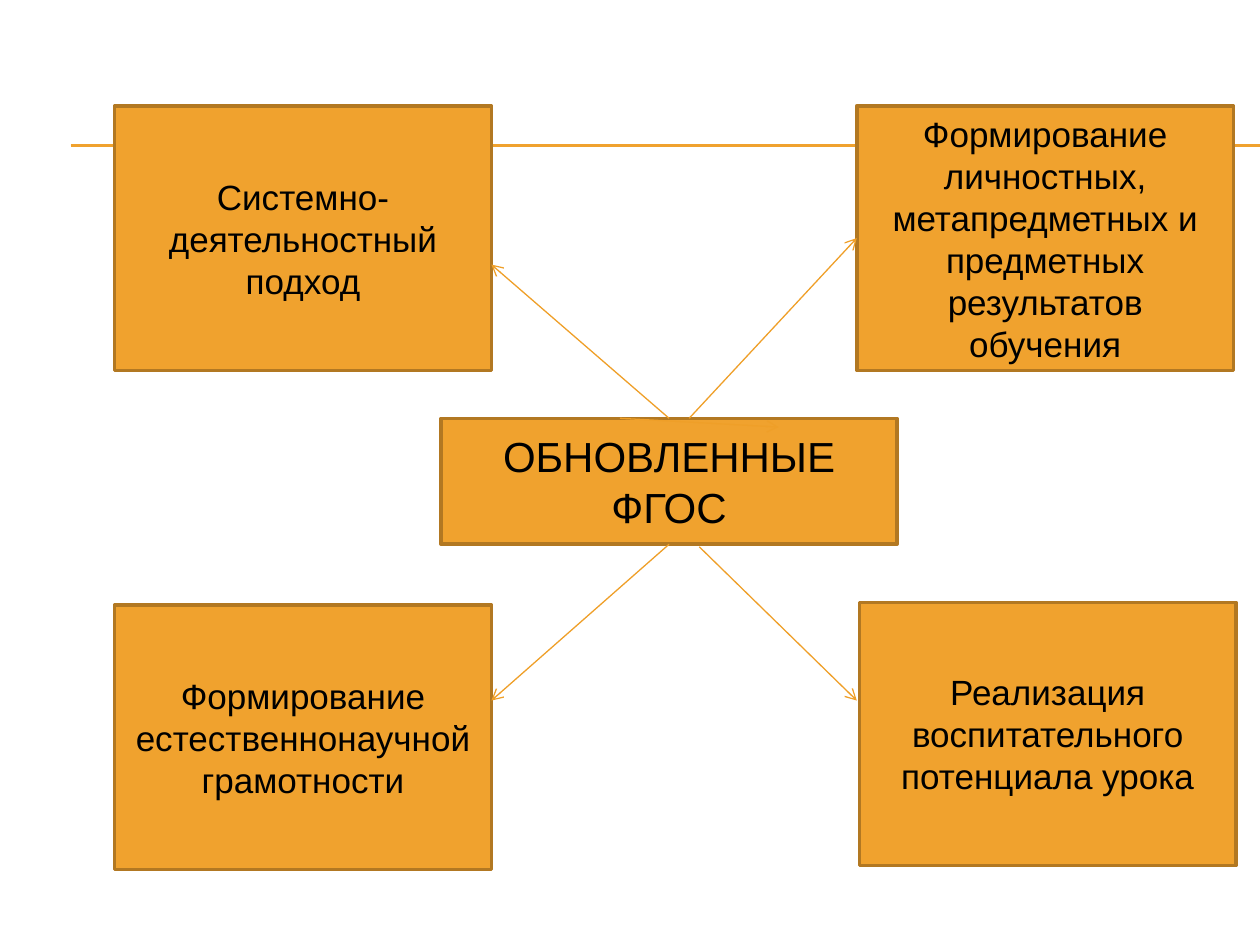
from pptx import Presentation
from pptx.dml.color import RGBColor as Rgb
from pptx.enum.shapes import MSO_CONNECTOR as Link, MSO_SHAPE as Kind
from pptx.enum.text import MSO_ANCHOR as Anchor, PP_ALIGN as Align
from pptx.oxml.ns import qn
from pptx.util import Inches, Pt
from lxml.etree import SubElement

COLORS = {"fill": "F0A22E", "edge": "B27822", "arrow": "EF9F28", "text": "000000"}
WIDE, HIGH = 2.99, 2.1

BOXES = {
    "core": ("ОБНОВЛЕННЫЕ ФГОС", 24, (3.5, 3.32, 3.62, 1)),
    "method": ("Системно-деятельностный подход", 20, (0.91, 0.84, WIDE, HIGH)),
    "results": ("Формирование личностных, метапредметных и предметных результатов обучения",
                20, (6.8, 0.84, WIDE, HIGH)),
    "science": ("Формирование естественнонаучной грамотности", 20, (0.91, 4.8, WIDE, HIGH)),
    "values": ("Реализация воспитательного потенциала урока", 20, (6.82, 4.78, WIDE, 2.09)),
}
RULES = [1.15, 1.16]
ARROWS = [
    ((5.55, 4.34), (6.8, 5.56), None, None),
    ((5.31, 4.32), (3.9, 5.56), ("core", 2), None),
    ((5.47, 3.32), (6.8, 1.89), None, ("results", 1)),
    ((4.92, 3.32), (6.18, 3.39), None, None),
    ((5.31, 3.32), (3.9, 2.1), ("core", 0), None),
]


def color(name):
    return Rgb.from_string(COLORS[name])


def add_box(slide, text, size, place):
    box = slide.shapes.add_shape(Kind.RECTANGLE, *map(Inches, place))
    box.shadow.inherit = False
    box.fill.solid()
    box.fill.fore_color.rgb = color("fill")
    box.line.color.rgb = color("edge")
    box.line.width = Pt(2)
    frame = box.text_frame
    frame.word_wrap = True
    frame.vertical_anchor = Anchor.MIDDLE
    para = frame.paragraphs[0]
    para.text = text
    para.alignment = Align.CENTER
    para.font.name = "Arial"
    para.font.size = Pt(size)
    para.font.color.rgb = color("text")
    return box


def add_line(slide, start, end, tint):
    line = slide.shapes.add_connector(Link.STRAIGHT, *map(Inches, start + end))
    line.line.color.rgb = color(tint)
    line.line.width = Pt(0.75)
    SubElement(line._element.spPr, qn("a:effectLst"))
    return line


def main():
    deck = Presentation()
    deck.slide_width, deck.slide_height = Inches(10), Inches(7.5)
    slide = deck.slides.add_slide(deck.slide_layouts[6])
    for y in RULES:
        add_line(slide, (0.56, y), (10, y), "fill")
    boxes = {key: add_box(slide, *spec_row) for key, spec_row in BOXES.items()}
    for start, end, source, target in ARROWS:
        arrow = add_line(slide, start, end, "arrow")
        SubElement(arrow.line._get_or_add_ln(), qn("a:tailEnd"), type="arrow")
        if source:
            arrow.begin_connect(boxes[source[0]], source[1])
        if target:
            arrow.end_connect(boxes[target[0]], target[1])
    deck.save("out.pptx")


if __name__ == "__main__":
    main()
